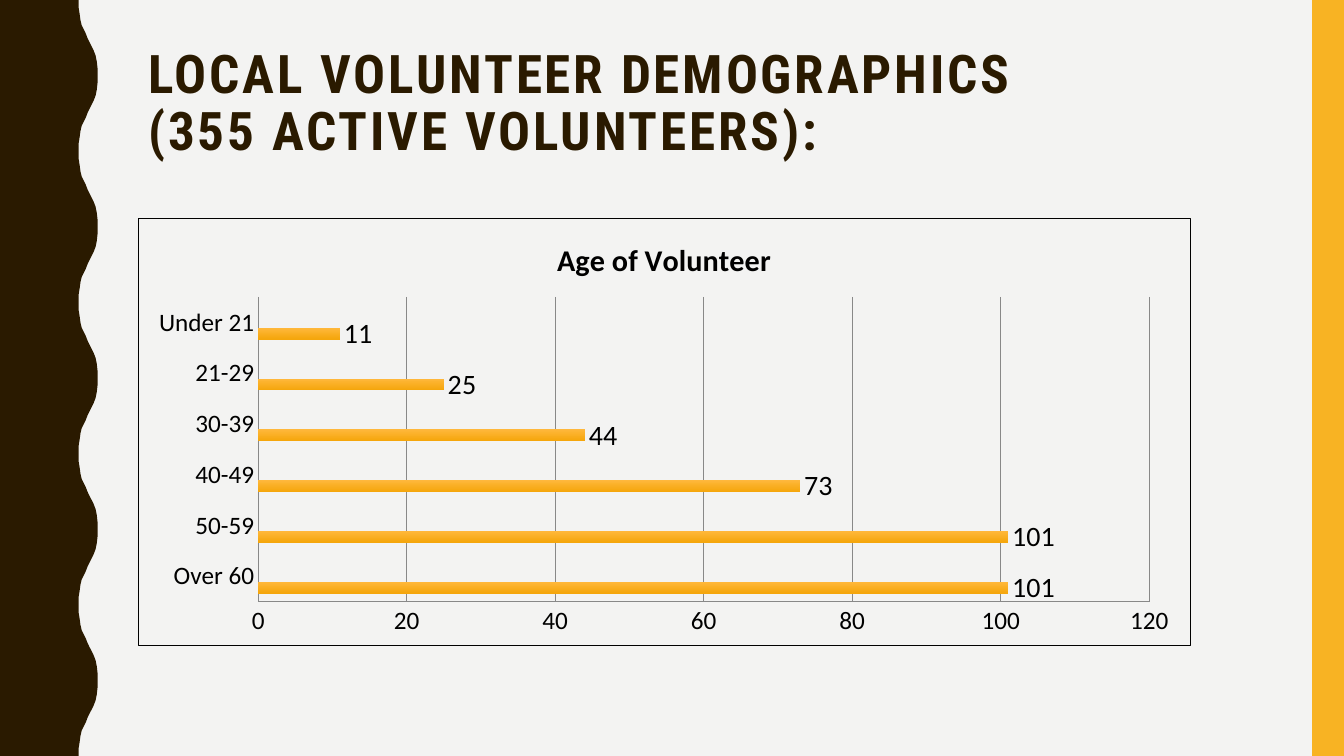
"""Build a slide with a bar chart of volunteer ages."""
from lxml import etree
from pptx import Presentation
from pptx.chart.data import CategoryChartData
from pptx.dml.color import RGBColor
from pptx.enum.chart import XL_CHART_TYPE, XL_LABEL_POSITION, XL_TICK_MARK
from pptx.enum.shapes import MSO_SHAPE
from pptx.enum.text import MSO_ANCHOR, MSO_AUTO_SIZE, PP_ALIGN
from pptx.util import Cm, Pt

BAR = XL_CHART_TYPE.BAR_CLUSTERED
END = XL_LABEL_POSITION.OUTSIDE_END
NONE = XL_TICK_MARK.NONE
RECT = MSO_SHAPE.RECTANGLE
TOP = MSO_ANCHOR.TOP
FIXED = MSO_AUTO_SIZE.NONE
LEFT = PP_ALIGN.LEFT

HEAD = "LOCAL VOLUNTEER DEMOGRAPHICS \v(355 ACTIVE VOLUNTEERS):"
LABEL = "Age of Volunteer"
AGES = {"Over 60": 101, "50-59": 101, "40-49": 73,
        "30-39": 44, "21-29": 25, "Under 21": 11}
SPARE = ["Series 2", "Series 3"]

HUES = {"back": "F3F3F2", "brown": "2A1A00", "gold": "F8B323",
        "light": "FFB83C", "deep": "F5A60C", "grid": "888888", "ink": "000000"}
SIZE = (33.87, 19.05)
SIDE = (33.07, 0, 0.8, 19.05)
TITLE = (3.48, 1.07, 28.27, 4.14)
CHART = (3.47, 5.5, 26.54, 10.78)
PLOT = {"x": 0.114, "y": 0.183, "w": 0.847, "h": 0.714}
WAVES, PERIOD = 5, 3.81
CURVE = [(1.98, 0), (1.98, 0.18), (2.01, 0.36), (2.03, 0.51), (2.06, 0.64),
         (2.11, 0.74), (2.16, 0.84), (2.21, 0.97), (2.26, 1.07), (2.31, 1.17),
         (2.36, 1.27), (2.41, 1.4), (2.44, 1.55), (2.46, 1.73), (2.46, 1.9)]

TEXT = {"name": "Roboto Condensed", "size": Pt(38), "bold": True}
BASE = {"name": "Calibri", "size": Pt(18), "bold": False}
LARGE = {"name": "Calibri", "size": Pt(20), "bold": False}
CAPTION = {"name": "Calibri", "size": Pt(21.6), "bold": True}
FRAME = {"vertical_anchor": TOP, "auto_size": FIXED, "word_wrap": True}
AXIS = {"major_tick_mark": NONE, "minor_tick_mark": NONE}
SCALE = {"minimum_scale": 0, "maximum_scale": 120, "major_unit": 20,
         "has_major_gridlines": True}
MARKS = {"show_value": True, "position": END}

NS = ('xmlns:c="http://schemas.openxmlformats.org/drawingml/2006/chart" '
      'xmlns:a="http://schemas.openxmlformats.org/drawingml/2006/main"')


def color(key):
    return RGBColor.from_string(HUES[key])


def apply(item, values):
    for name, value in values.items():
        setattr(item, name, value)


def style(font, values, key):
    apply(font, values)
    font.color.rgb = color(key)


def paint(shape, key):
    shape.shadow.inherit = False
    shape.fill.solid()
    shape.fill.fore_color.rgb = color(key)
    shape.line.fill.background()


def add_wave(shapes):
    cycle = CURVE + [(x, PERIOD - y) for x, y in CURVE[-2::-1]]
    edge = [(x, y + n * PERIOD) for n in range(WAVES) for x, y in cycle]
    points = [(Cm(x), Cm(y)) for x, y in edge + [(0, SIZE[1])]]
    form = shapes.build_freeform(0, 0)
    form.add_line_segments(points, close=True)
    paint(form.convert_to_shape(), "brown")


def set_title(title):
    title.left, title.top, title.width, title.height = map(Cm, TITLE)
    frame = title.text_frame
    frame.text = HEAD
    apply(frame, FRAME)
    para = frame.paragraphs[0]
    apply(para, {"alignment": LEFT, "line_spacing": 0.9})
    for run in para.runs:
        style(run.font, TEXT, "brown")
        run.font._element.set("spc", "200")


def set_layout(chart):
    area = chart._chartSpace.chart.plotArea
    for old in area.xpath("c:layout"):
        area.remove(old)
    parts = "".join(f'<c:{k} val="{v}"/>' for k, v in PLOT.items())
    area.insert(0, etree.fromstring(
        f'<c:layout {NS}><c:manualLayout><c:layoutTarget val="inner"/>'
        f'<c:xMode val="edge"/><c:yMode val="edge"/>{parts}'
        '</c:manualLayout></c:layout>'))
    chart._chartSpace.chart.addnext(etree.fromstring(
        f'<c:spPr {NS}><a:noFill/><a:ln w="9525"><a:solidFill>'
        f'<a:srgbClr val="{HUES["ink"]}"/></a:solidFill></a:ln></c:spPr>'))


def add_bars(shapes):
    data = CategoryChartData()
    data.categories = list(AGES)
    data.add_series("Series 1", list(AGES.values()))
    for name in SPARE:
        data.add_series(name, [None] * len(AGES))
    chart = shapes.add_chart(BAR, *map(Cm, CHART), data).chart
    style(chart.font, BASE, "ink")
    chart.has_legend = False
    chart.has_title = True
    frame = chart.chart_title.text_frame
    frame.text = LABEL
    style(frame.paragraphs[0].runs[0].font, CAPTION, "ink")
    chart.chart_title.include_in_layout = False

    cats, vals = chart.category_axis, chart.value_axis
    apply(vals, SCALE)
    for axis in (cats, vals):
        apply(axis, AXIS)
        style(axis.tick_labels.font, BASE, "ink")
    for line in (cats.format.line, vals.format.line,
                 vals.major_gridlines.format.line):
        line.color.rgb = color("grid")
        line.width = Pt(0.75)

    plot = chart.plots[0]
    apply(plot, {"gap_width": 150, "overlap": 0, "vary_by_categories": False})
    bars = plot.series[0]
    fill = bars.format.fill
    fill.gradient()
    fill.gradient_angle = 270
    for stop, key in zip(fill.gradient_stops, ("light", "deep")):
        stop.color.rgb = color(key)
    apply(bars.data_labels, MARKS)
    style(bars.data_labels.font, LARGE, "ink")
    set_layout(chart)


def main():
    deck = Presentation()
    deck.slide_width, deck.slide_height = map(Cm, SIZE)
    slide = deck.slides.add_slide(deck.slide_layouts[5])
    slide.background.fill.solid()
    slide.background.fill.fore_color.rgb = color("back")
    add_wave(slide.shapes)
    paint(slide.shapes.add_shape(RECT, *map(Cm, SIDE)), "gold")
    set_title(slide.shapes.title)
    add_bars(slide.shapes)
    deck.save("out.pptx")


if __name__ == "__main__":
    main()
